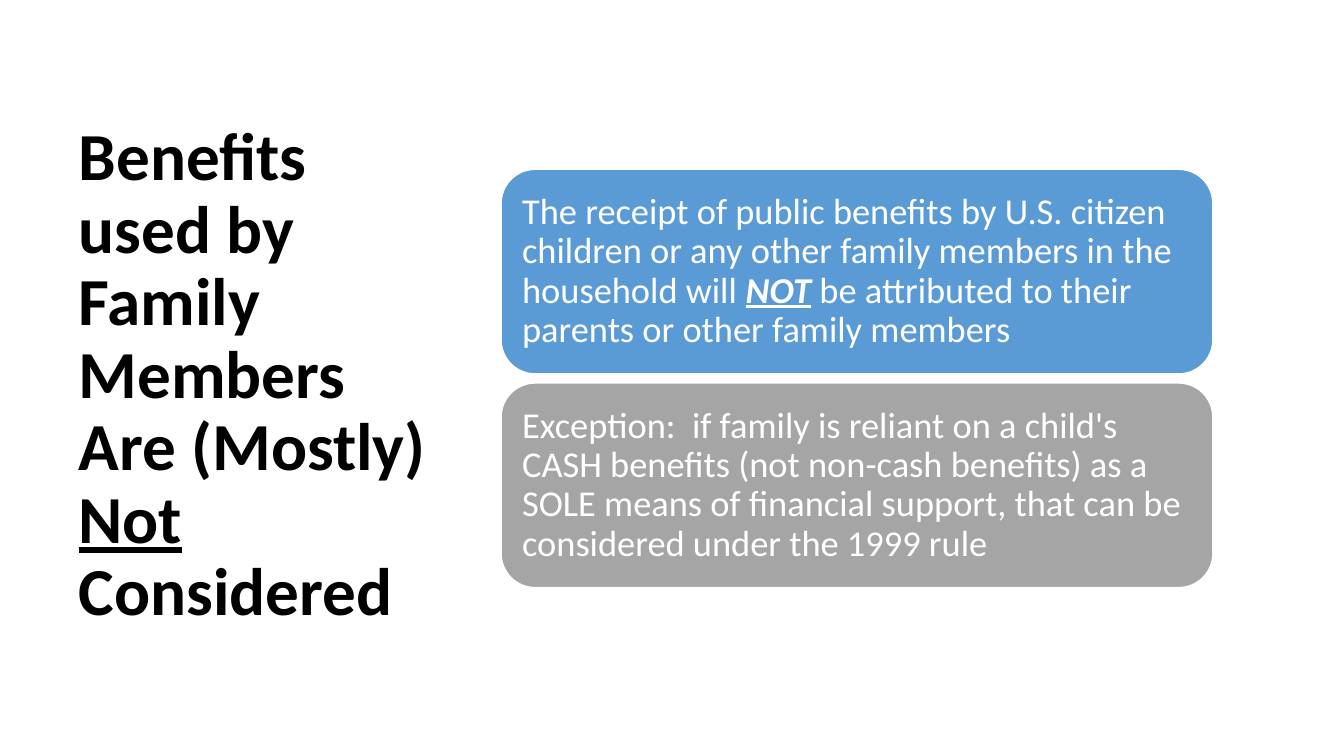
"""Build a slide on how benefits used by family members are considered."""
from dataclasses import dataclass

from pptx import Presentation
from pptx.dml.color import RGBColor
from pptx.enum.shapes import MSO_SHAPE
from pptx.enum.text import MSO_ANCHOR, PP_ALIGN
from pptx.slide import Slide
from pptx.text.text import TextFrame
from pptx.util import Inches, Pt

ROUNDED = MSO_SHAPE.ROUNDED_RECTANGLE
MIDDLE = MSO_ANCHOR.MIDDLE
LEFT = PP_ALIGN.LEFT


@dataclass(frozen=True)
class Theme:
    font: str = "Calibri"
    title_size: int = 48
    card_size: int = 26
    outline_width: int = 1
    line_spacing: float = 0.9
    black: str = "000000"
    white: str = "FFFFFF"
    blue: str = "5B9BD5"
    gray: str = "A5A5A5"


@dataclass(frozen=True)
class Run:
    text: str
    bold: bool = False
    italic: bool = False
    underline: bool = False
    break_after: bool = False


@dataclass(frozen=True)
class Card:
    fill: str
    runs: tuple[Run, ...]


THEME = Theme()
CARD_LEFT, CARD_TOP = 4.97, 1.68
CARD_WIDTH, CARD_HEIGHT = 7.06, 2.03
CARD_PITCH = 2.12

TITLE = (
    Run("Benefits used by Family Members ", bold=True, break_after=True),
    Run("Are (Mostly) ", bold=True),
    Run("Not", bold=True, underline=True),
    Run(" Considered", bold=True),
)
CARDS = (
    Card(THEME.blue, (
        Run("The receipt of public benefits by U.S. citizen children or any "
            "other family members in the household will "),
        Run("NOT", bold=True, italic=True, underline=True),
        Run(" be attributed to their parents or other family members"),
    )),
    Card(THEME.gray, (
        Run("Exception:  if family is reliant on a child's CASH benefits "
            "(not non-cash benefits) as a SOLE means of financial support, "
            "that can be considered under the 1999 rule"),
    )),
)


def write(tf: TextFrame, runs: tuple[Run, ...], size: int, color: str,
          inset_x: float, inset_y: float) -> None:
    """Fill a text frame with one left-aligned, vertically centred paragraph."""
    tf.word_wrap = True
    tf.vertical_anchor = MIDDLE
    tf.margin_left = tf.margin_right = Inches(inset_x)
    tf.margin_top = tf.margin_bottom = Inches(inset_y)
    p = tf.paragraphs[0]
    p.alignment = LEFT
    p.line_spacing = THEME.line_spacing
    for run in runs:
        r = p.add_run()
        r.text = run.text
        r.font.name = THEME.font
        r.font.size = Pt(size)
        r.font.color.rgb = RGBColor.from_string(color)
        r.font.bold = run.bold
        r.font.italic = run.italic
        r.font.underline = run.underline
        if run.break_after:
            p.add_line_break()


def add_title(s: Slide) -> None:
    """Add the heading at the left of the slide."""
    sp = s.shapes.add_textbox(Inches(0.71), Inches(0.67), Inches(3.68), Inches(6.13))
    write(sp.text_frame, TITLE, THEME.title_size, THEME.black, 0.07, 0.04)


def add_card(s: Slide, card: Card, row: int) -> None:
    """Add one rounded card at its row in the stack."""
    sp = s.shapes.add_shape(
        ROUNDED, Inches(CARD_LEFT), Inches(CARD_TOP + row * CARD_PITCH),
        Inches(CARD_WIDTH), Inches(CARD_HEIGHT))
    sp.shadow.inherit = False
    sp.fill.solid()
    sp.fill.fore_color.rgb = RGBColor.from_string(card.fill)
    sp.line.color.rgb = RGBColor.from_string(THEME.white)
    sp.line.width = Pt(THEME.outline_width)
    write(sp.text_frame, card.runs, THEME.card_size, THEME.white, 0.11, 0.11)


def main() -> None:
    """Build and save the presentation."""
    prs = Presentation()
    prs.slide_width, prs.slide_height = Inches(13.33), Inches(7.5)
    s = prs.slides.add_slide(prs.slide_layouts[6])
    add_title(s)
    for row, card in enumerate(CARDS):
        add_card(s, card, row)
    prs.save("out.pptx")


if __name__ == "__main__":
    main()
